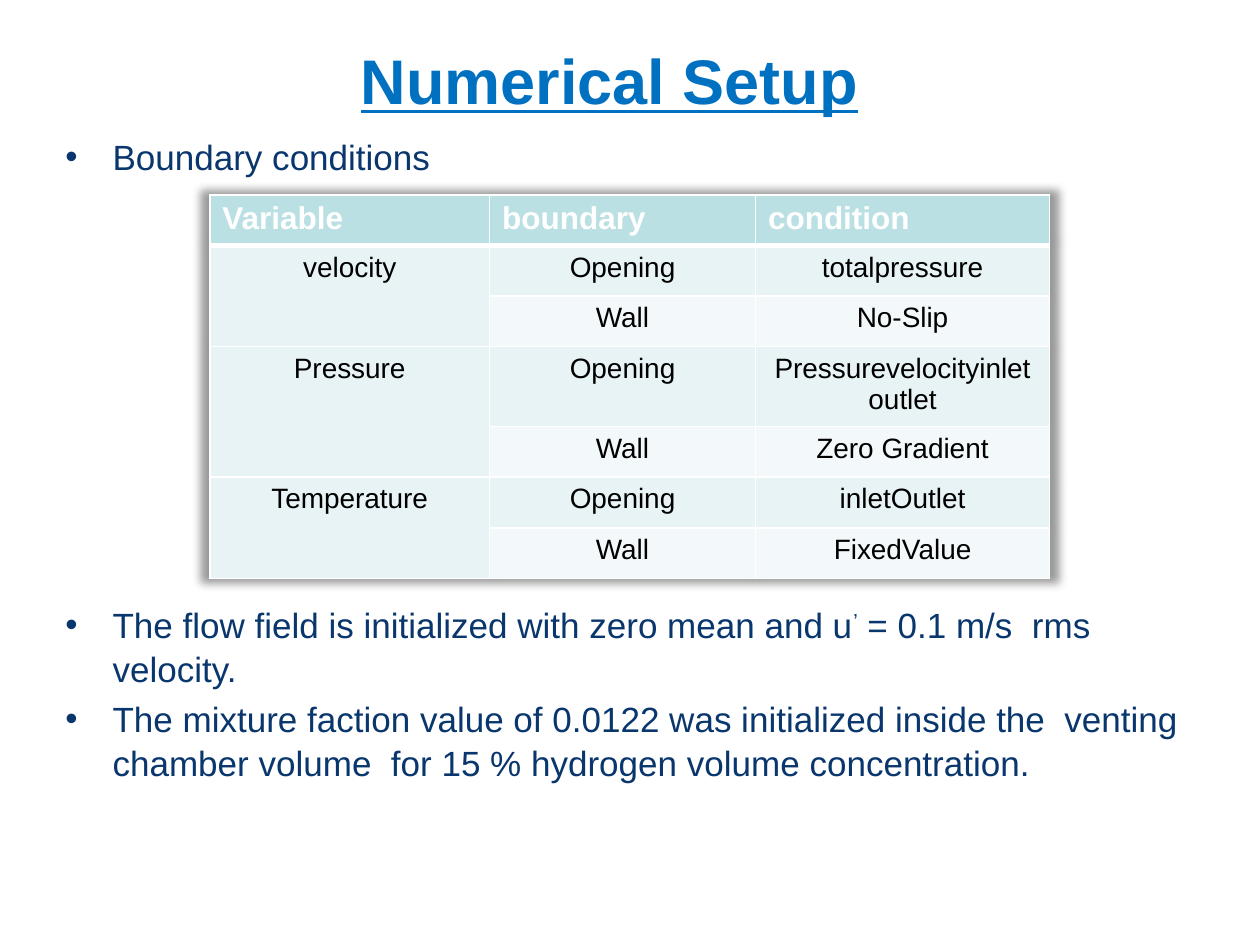
from dataclasses import dataclass

from lxml.etree import SubElement
from pptx import Presentation
from pptx.dml.color import RGBColor
from pptx.enum.text import MSO_ANCHOR as Anchor, PP_ALIGN as Align
from pptx.oxml import parse_xml
from pptx.oxml.ns import nsdecls, qn
from pptx.util import Cm, Pt

FONT = "Arial"
TITLE_BLUE, BODY_BLUE = "0070C0", "09366D"
WHITE, BLACK = "FFFFFF", "000000"
HEADER_FILL, OPENING_FILL, WALL_FILL = "BBE0E3", "E7F3F4", "F3F9FA"


@dataclass
class Run:
    text: str
    superscript: bool = False


@dataclass
class Variable:
    name: str
    opening: str
    wall: str


HEADINGS = ("Variable", "boundary", "condition")
VARIABLES = [
    Variable("velocity", "totalpressure", "No-Slip"),
    Variable("Pressure", "Pressurevelocityinletoutlet", "Zero Gradient"),
    Variable("Temperature", "inletOutlet", "FixedValue"),
]
INITIALIZATION = [
    [Run("The flow field is initialized with zero mean and u"), Run("’", True),
     Run(" = 0.1 m/s  rms velocity.")],
    [Run("The mixture faction value of 0.0122 was initialized inside the  venting "
         "chamber volume  for 15 % hydrogen volume concentration.")],
]


def color(value: str) -> RGBColor:
    return RGBColor.from_string(value)


def add_run(paragraph, text: str, size: float, ink: str, bold: bool = False):
    run = paragraph.add_run()
    run.text = text
    run.font.name = FONT
    run.font.size = Pt(size)
    run.font.bold = bold
    run.font.color.rgb = color(ink)
    return run


def add_bullets(slide, top: float, height: float, items: list[list[Run]]) -> None:
    box = slide.shapes.add_textbox(Cm(1.07), Cm(top), Cm(23.29), Cm(height))
    frame = box.text_frame
    frame.word_wrap = True
    for index, runs in enumerate(items):
        paragraph = frame.add_paragraph() if index else frame.paragraphs[0]
        properties = paragraph._p.get_or_add_pPr()
        properties.set("marL", str(Cm(0.95)))
        properties.set("indent", str(-Cm(0.95)))
        SubElement(properties, qn("a:buFont"), typeface=FONT)
        SubElement(properties, qn("a:buChar"), char="•")
        paragraph.line_spacing = 1.04
        if index:
            paragraph.space_before = Pt(4)
        for item in runs:
            run = add_run(paragraph, item.text, 20, BODY_BLUE)
            if item.superscript:
                run.font._element.set("baseline", "30000")


def set_borders(cell, bottom: float) -> None:
    properties = cell._tc.get_or_add_tcPr()
    widths = {"lnL": 1, "lnR": 1, "lnT": 1, "lnB": bottom}
    for position, (side, width) in enumerate(widths.items()):
        properties.insert(position, parse_xml(
            f'<a:{side} {nsdecls("a")} w="{Pt(width)}"><a:solidFill>'
            f'<a:srgbClr val="{WHITE}"/></a:solidFill></a:{side}>'))


def fill_cell(cell, text: str, fill: str, header: bool = False) -> None:
    cell.fill.solid()
    cell.fill.fore_color.rgb = color(fill)
    set_borders(cell, 3 if header else 1)
    paragraph = cell.text_frame.paragraphs[0]
    paragraph.alignment = Align.LEFT if header else Align.CENTER
    if text:
        add_run(paragraph, text, 18 if header else 16, WHITE if header else BLACK, header)


def add_conditions_table(slide) -> None:
    row_count = 1 + 2 * len(VARIABLES)
    frame = slide.shapes.add_table(row_count, len(HEADINGS), Cm(4.23), Cm(3.93),
                                   Cm(16.93), Cm(1.02 * row_count))
    table = frame.table
    for column, width in zip(table.columns, (5.64, 5.36, 5.93)):
        column.width = Cm(width)

    # Soft shadow around the whole table
    table._tbl.tblPr.insert(0, parse_xml(
        f'<a:effectLst {nsdecls("a")}><a:outerShdw blurRad="63500" sx="102000" '
        'sy="102000" algn="ctr" rotWithShape="0"><a:srgbClr val="000000">'
        '<a:alpha val="40000"/></a:srgbClr></a:outerShdw></a:effectLst>'))

    for column, heading in enumerate(HEADINGS):
        fill_cell(table.cell(0, column), heading, HEADER_FILL, header=True)

    # Each variable spans an opening row and a wall row
    for index, variable in enumerate(VARIABLES):
        top = 1 + 2 * index
        rows = [(variable.name, "Opening", variable.opening, OPENING_FILL),
                ("", "Wall", variable.wall, WALL_FILL)]
        for row, (name, boundary, condition, fill) in enumerate(rows, top):
            fill_cell(table.cell(row, 0), name, OPENING_FILL)
            fill_cell(table.cell(row, 1), boundary, fill)
            fill_cell(table.cell(row, 2), condition, fill)
        table.cell(top, 0).merge(table.cell(top + 1, 0))


def set_title(slide, text: str) -> None:
    title = slide.shapes.title
    title.left, title.top, title.width, title.height = Cm(2.34), Cm(0.25), Cm(19.89), Cm(2.69)
    title.text_frame.vertical_anchor = Anchor.MIDDLE
    paragraph = title.text_frame.paragraphs[0]
    paragraph.alignment = Align.CENTER
    add_run(paragraph, text, 36, TITLE_BLUE, bold=True).font.underline = True


def main() -> None:
    presentation = Presentation()
    presentation.slide_width, presentation.slide_height = Cm(25.4), Cm(19.05)
    slide = presentation.slides.add_slide(presentation.slide_layouts[5])
    set_title(slide, "Numerical Setup")
    add_bullets(slide, 2.57, 1.1, [[Run("Boundary conditions")]])
    add_conditions_table(slide)
    add_bullets(slide, 12.01, 3.9, INITIALIZATION)
    presentation.save("out.pptx")


if __name__ == "__main__":
    main()
